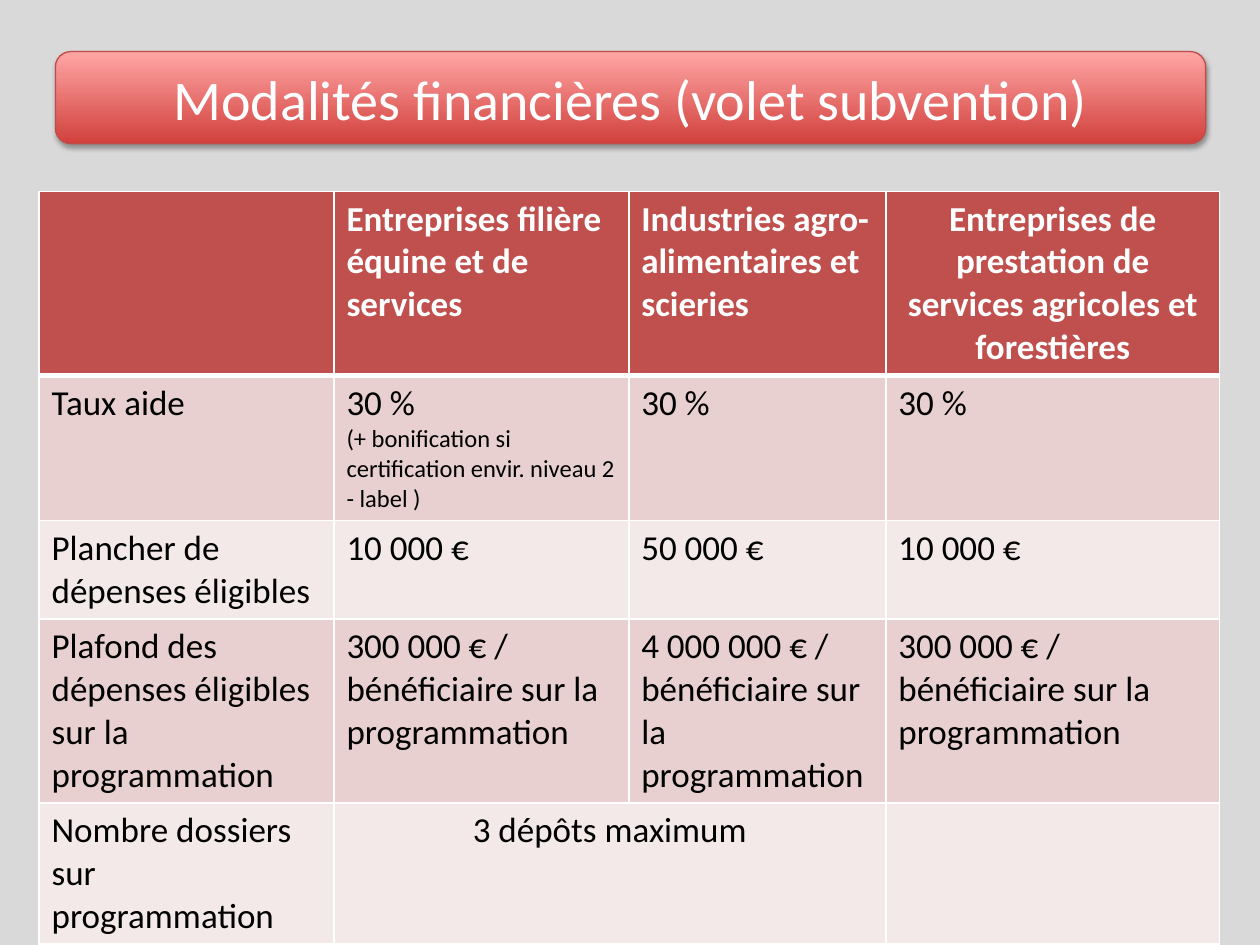
from lxml.etree import SubElement
from pptx import Presentation
from pptx.dml.color import RGBColor as Rgb
from pptx.enum.shapes import MSO_SHAPE as Preset
from pptx.enum.text import MSO_ANCHOR as Anchor, MSO_AUTO_SIZE as AutoSize, PP_ALIGN as Align
from pptx.oxml import parse_xml
from pptx.oxml.ns import nsdecls, qn
from pptx.util import Pt

COLORS = {
    "background": "D9D9D9", "white": "FFFFFF", "black": "000000",
    "header": "C0504D", "odd_row": "E8D0D0", "even_row": "F4E9E9",
    "banner_dark": "D1403C", "banner_light": "FFA6A5", "banner_line": "BF4C48",
}
BANNER_BOX = [Pt(v) for v in (31.7, 29.5, 657.3, 52.6)]
TABLE_BOX = [Pt(v) for v in (22.3, 109.4, 674.7, 422.6)]
COLUMN_WIDTHS = (168.5, 168.5, 146.9, 190.8)
ROW_HEIGHTS = (103, 81.4, 55, 103.7, 79.5)

CEILING = "{} € / bénéficiaire sur la programmation"
BONUS = "(+ bonification si certification envir. niveau 2 - label )"
ROWS = [
    ["", "Entreprises filière équine et de services",
     "Industries agro-alimentaires et scieries",
     "Entreprises de prestation de services agricoles et forestières"],
    ["Taux aide", "30 %", "30 %", "30 %"],
    ["Plancher de dépenses éligibles", "10 000 €", "50 000 €", "10 000 €"],
    ["Plafond des dépenses éligibles sur la programmation",
     *[CEILING.format(amount) for amount in ("300 000", "4 000 000", "300 000")]],
    ["Nombre dossiers sur programmation", "3 dépôts maximum", "", ""],
]
CENTERED = {(0, 3), (4, 1)}


class SlideBuilder:
    font = "Calibri"

    def __init__(self, slide):
        self.slide = slide
        background = slide.background.fill
        background.solid()
        background.fore_color.rgb = self.color("background")

    @staticmethod
    def color(key):
        return Rgb.from_string(COLORS[key])

    def format_text(self, paragraph, color, align=Align.LEFT, size=20, bold=False):
        paragraph.alignment = align
        style = {"name": self.font, "size": Pt(size), "bold": bold}
        for attribute, value in style.items():
            setattr(paragraph.font, attribute, value)
        paragraph.font.color.rgb = self.color(color)

    def banner(self):
        banner = self.slide.shapes.add_shape(Preset.ROUNDED_RECTANGLE, *BANNER_BOX)
        banner.fill.gradient()
        banner.fill.gradient_angle = 90
        for stop, position, key in zip(banner.fill.gradient_stops, (0, 1),
                                       ("banner_dark", "banner_light")):
            stop.position = position
            stop.color.rgb = self.color(key)
        banner.line.color.rgb = self.color("banner_line")
        banner.line.width = Pt(0.75)
        # Soft shadow straight below
        banner.shadow.inherit = False
        effects = banner._element.spPr.find(qn("a:effectLst"))
        shadow = SubElement(effects, qn("a:outerShdw"), blurRad=str(Pt(3.1)),
                            dist=str(Pt(1.8)), dir="5400000", rotWithShape="0")
        tint = SubElement(shadow, qn("a:srgbClr"), val=COLORS["black"])
        SubElement(tint, qn("a:alpha"), val="35000")

    def title(self, text):
        title = self.slide.shapes.title
        title.left, title.top, title.width, title.height = BANNER_BOX
        # Bring the title in front of its banner
        self.slide.shapes._spTree.append(title._element)
        frame = title.text_frame
        frame.text = text
        layout = {"word_wrap": True, "auto_size": AutoSize.NONE,
                  "vertical_anchor": Anchor.MIDDLE}
        for attribute, value in layout.items():
            setattr(frame, attribute, value)
        self.format_text(frame.paragraphs[0], "white", Align.CENTER, 32)

    def borders(self, cell, bottom):
        properties = cell._tc.get_or_add_tcPr()
        for index, (side, width) in enumerate(zip("LRTB", (1, 1, 1, bottom))):
            properties.insert(index, parse_xml(
                f'<a:ln{side} {nsdecls("a")} w="{Pt(width)}"><a:solidFill>'
                f'<a:srgbClr val="{COLORS["white"]}"/></a:solidFill></a:ln{side}>'))

    def table(self, rows):
        table = self.slide.shapes.add_table(len(rows), len(rows[0]), *TABLE_BOX).table
        table.horz_banding = False
        for column, width in zip(table.columns, COLUMN_WIDTHS):
            column.width = Pt(width)
        for row, height in zip(table.rows, ROW_HEIGHTS):
            row.height = Pt(height)
        for r, texts in enumerate(rows):
            header = r == 0
            fill = "header" if header else ("even_row", "odd_row")[r % 2]
            for c, text in enumerate(texts):
                cell = table.cell(r, c)
                cell.text = text
                cell.fill.solid()
                cell.fill.fore_color.rgb = self.color(fill)
                self.borders(cell, 3 if header else 1)
                self.format_text(cell.text_frame.paragraphs[0],
                                 "white" if header else "black",
                                 Align.CENTER if (r, c) in CENTERED else Align.LEFT,
                                 bold=header)
        return table

    def note(self, cell, text):
        paragraph = cell.text_frame.add_paragraph()
        paragraph.text = text
        self.format_text(paragraph, "black", size=14)


def main():
    deck = Presentation()
    deck.slide_width, deck.slide_height = Pt(720), Pt(540)
    builder = SlideBuilder(deck.slides.add_slide(deck.slide_layouts[5]))

    # Heading
    builder.banner()
    builder.title("Modalités financières (volet subvention)")

    # Financial terms by type of company
    terms = builder.table(ROWS)
    builder.note(terms.cell(1, 1), BONUS)
    terms.cell(4, 1).merge(terms.cell(4, 2))

    deck.save("out.pptx")


if __name__ == "__main__":
    main()
